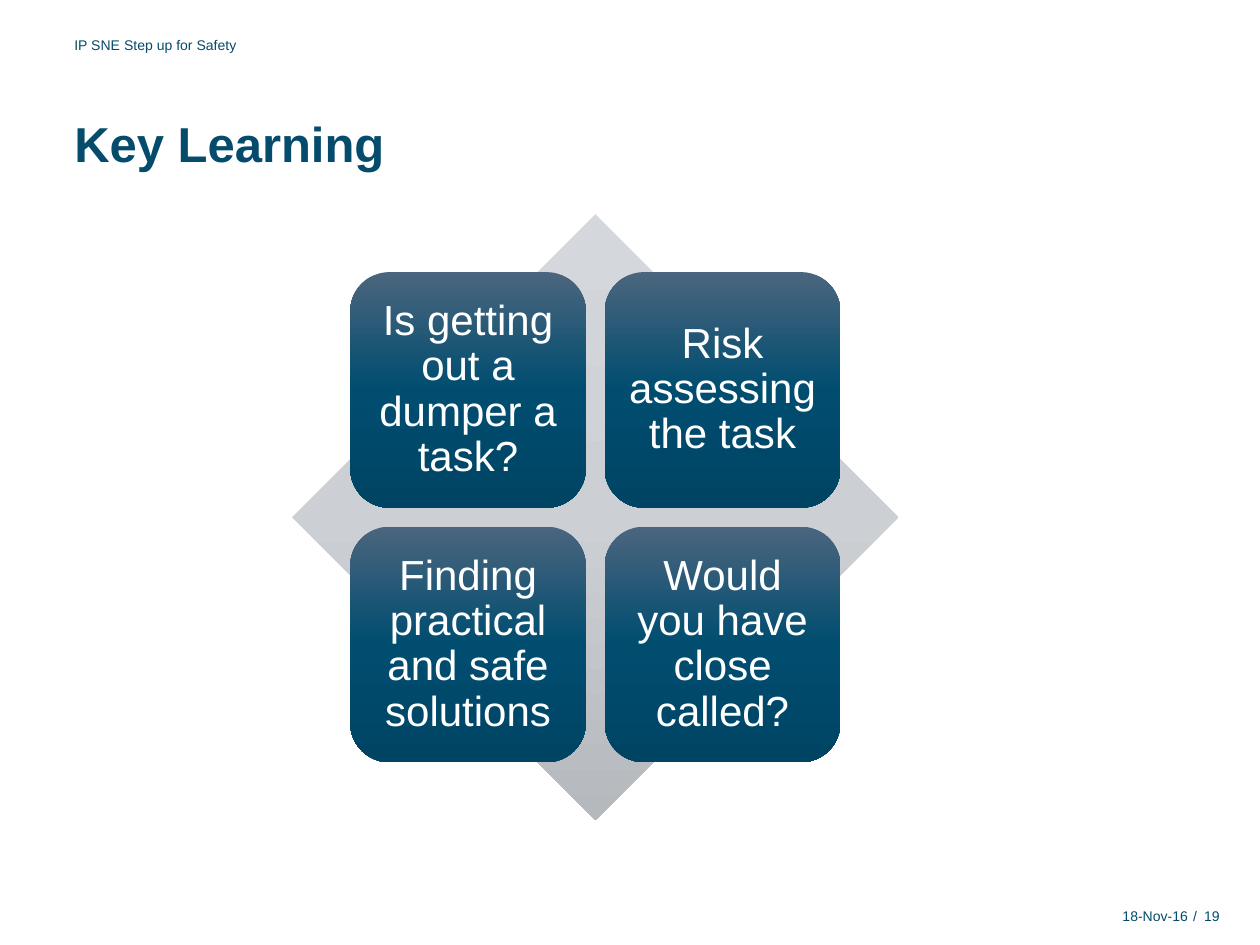
from copy import deepcopy
from pptx import Presentation
from pptx.dml.color import RGBColor as RGB
from pptx.enum.shapes import MSO_SHAPE as Shape
from pptx.enum.text import MSO_ANCHOR as Anchor, PP_ALIGN as Align
from pptx.oxml.ns import qn
from pptx.util import Inches, Pt

COLORS = {"navy": "054B6B", "white": "FFFFFF"}
GRADS = {
    "diamond": ("D4D7DB", "CCD0D4", "B5B8BD"),
    "card": ("4B657E", "004D70", "004464"),
}
SMALL = {"size": Pt(8), "bold": False}
LARGE = {"size": Pt(28), "bold": True}
CARD = {"size": Pt(24), "bold": False}

# text, (left, top, width, height), font format, alignment, anchor
LABELS = [
    ("IP SNE Step up for Safety", (0.59, 0.26, 4.72, 0.2), SMALL, Align.LEFT, Anchor.MIDDLE),
    ("Key Learning", (0.59, 0.9, 7.95, 0.47), LARGE, Align.LEFT, Anchor.TOP),
    ("18-Nov-16", (7.1, 7.17, 2.33, 0.2), SMALL, Align.RIGHT, Anchor.MIDDLE),
    ("/", (9.47, 7.17, 0.04, 0.2), SMALL, Align.LEFT, Anchor.MIDDLE),
    ("19", (9.52, 7.17, 0.16, 0.2), SMALL, Align.RIGHT, Anchor.MIDDLE),
]
CARDS = [
    "Is getting out a dumper a task?",
    "Risk assessing the task",
    "Finding practical and safe solutions",
    "Would you have close called?",
]
LEFT, TOP, SPAN = 2.32, 1.7, 4.81  # diamond
SIDE, GAP = 1.87, 0.15             # cards


def write(shape, text, style, color, align, anchor, inset=0):
    frame = shape.text_frame
    form = dict.fromkeys(
        ("margin_left", "margin_top", "margin_right", "margin_bottom"), Inches(inset))
    form |= {"word_wrap": True, "vertical_anchor": anchor}
    for key, val in form.items():
        setattr(frame, key, val)
    para = frame.paragraphs[0]
    para.text, para.alignment = text, align
    for key, val in {"name": "Arial", **style}.items():
        setattr(para.font, key, val)
    para.font.color.rgb = RGB.from_string(COLORS[color])
    return para


def add_block(slide, kind, box, grad):
    """Add a borderless shape with a three-stop gradient, top to bottom."""
    shape = slide.shapes.add_shape(kind, *map(Inches, box))
    shape.shadow.inherit = False
    shape.line.fill.background()
    fill = shape.fill
    fill.gradient()
    fill.gradient_angle = 270
    stops = shape.element.spPr.find(qn("a:gradFill")).find(qn("a:gsLst"))
    stops.append(deepcopy(stops[-1]))
    for num, (stop, color) in enumerate(zip(fill.gradient_stops, GRADS[grad])):
        stop.position = num / 2
        stop.color.rgb = RGB.from_string(color)
    return shape


def main():
    deck = Presentation()
    deck.slide_width, deck.slide_height = Inches(10), Inches(7.5)
    slide = deck.slides.add_slide(deck.slide_layouts[6])

    for text, box, style, align, anchor in LABELS:
        label = slide.shapes.add_textbox(*map(Inches, box))
        write(label, text, style, "navy", align, anchor)

    add_block(slide, Shape.DIAMOND, (LEFT, TOP, SPAN, SPAN), "diamond")
    edge = (SPAN - 2 * SIDE - GAP) / 2
    for num, text in enumerate(CARDS):
        row, col = divmod(num, 2)
        x = LEFT + edge + col * (SIDE + GAP)
        y = TOP + edge + row * (SIDE + GAP)
        card = add_block(slide, Shape.ROUNDED_RECTANGLE, (x, y, SIDE, SIDE), "card")
        para = write(card, text, CARD, "white", Align.CENTER, Anchor.MIDDLE, 0.1)
        para.line_spacing = 0.9

    deck.save("out.pptx")


if __name__ == "__main__":
    main()
